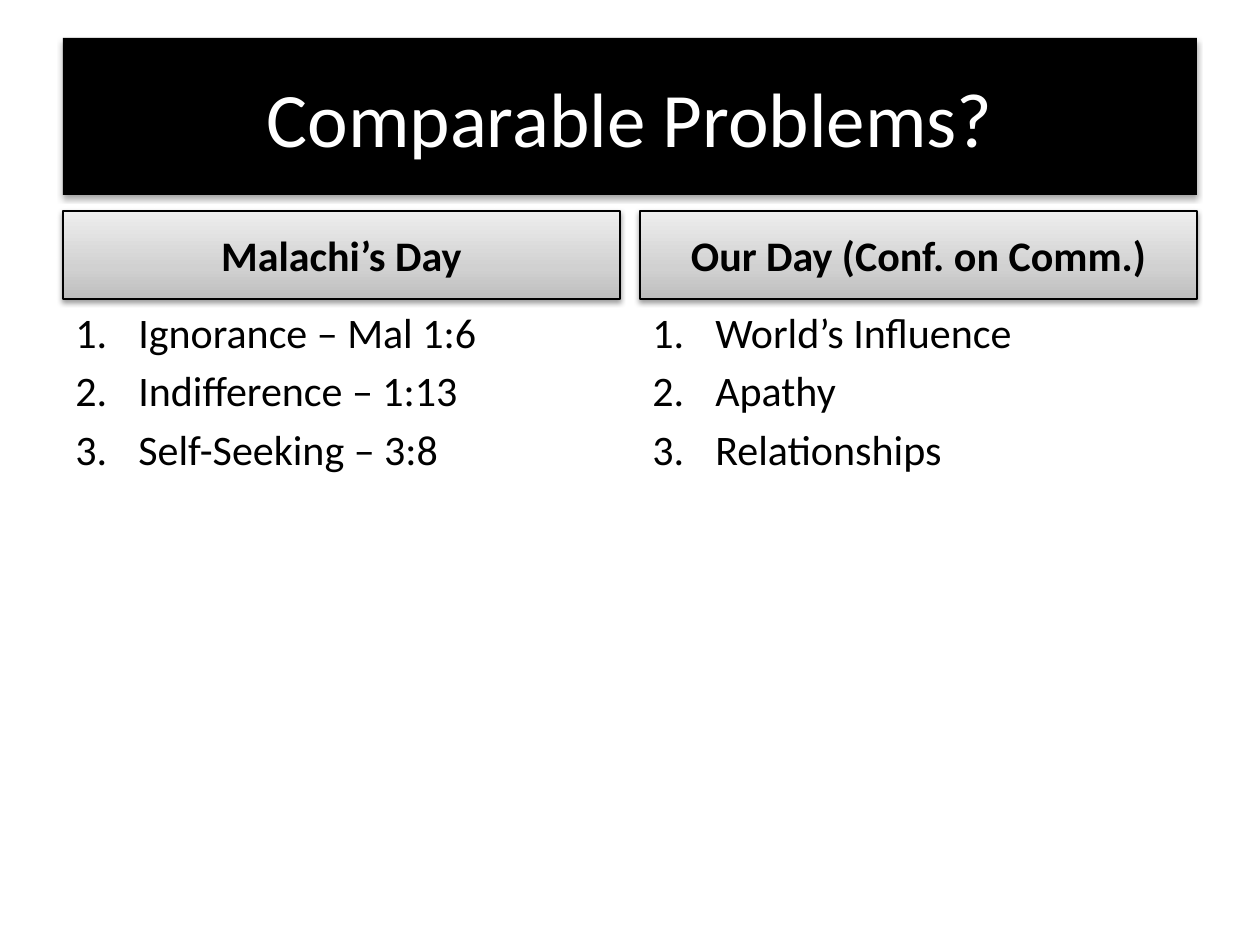
from dataclasses import dataclass

from lxml.etree import SubElement
from pptx import Presentation
from pptx.dml.color import RGBColor
from pptx.enum.shapes import MSO_SHAPE
from pptx.enum.text import MSO_ANCHOR, PP_ALIGN
from pptx.oxml import parse_xml
from pptx.oxml.ns import nsdecls, qn
from pptx.util import Inches, Pt

PX_PER_INCH = 126


@dataclass(frozen=True)
class Theme:
    font: str = "Calibri"
    dark: str = "000000"
    light: str = "FFFFFF"
    header_stops: tuple = ((0, "BDBDBD"), (35, "D1D1D1"), (100, "EEEEEE"))
    title_size: int = 44
    body_size: int = 24


THEME = Theme()
MARGIN, CONTENT_WIDTH = 63, 1134
COLUMN_WIDTH, COLUMN_GAP = 557, 20
COLUMNS = (
    ("Malachi’s Day",
     ("Ignorance – Mal 1:6", "Indifference – 1:13", "Self-Seeking – 3:8")),
    ("Our Day (Conf. on Comm.)",
     ("World’s Influence", "Apathy", "Relationships")),
)


def px(*lengths):
    return [Inches(length / PX_PER_INCH) for length in lengths]


def style_paragraph(para, text, size, color, bold=False):
    para.text = text
    para.font.name = THEME.font
    para.font.size = Pt(size)
    para.font.bold = bold
    para.font.color.rgb = RGBColor.from_string(color)


def add_space_before(para, percent):
    spacing = SubElement(para._p.get_or_add_pPr(), qn("a:spcBef"))
    SubElement(spacing, qn("a:spcPct"), val=str(percent * 1000))


def add_shadow(shape, opacity, distance):
    """Drop a soft black shadow straight down."""
    shape.shadow.inherit = False
    effects = shape._element.spPr.find(qn("a:effectLst"))
    shadow = SubElement(effects, qn("a:outerShdw"), blurRad=str(Pt(3.1)),
                        dist=str(Pt(distance)), dir="5400000", rotWithShape="0")
    color = SubElement(shadow, qn("a:srgbClr"), val=THEME.dark)
    SubElement(color, qn("a:alpha"), val=str(opacity * 1000))


def fill_gradient(shape, stops):
    """Run the gradient stops from the bottom edge to the top."""
    shape.fill.gradient()
    properties = shape._element.spPr
    marks = "".join(f'<a:gs pos="{position * 1000}"><a:srgbClr val="{color}"/></a:gs>'
                    for position, color in stops)
    gradient = parse_xml(f'<a:gradFill {nsdecls("a")}><a:gsLst>{marks}</a:gsLst>'
                         '<a:lin ang="16200000" scaled="0"/></a:gradFill>')
    properties.replace(properties.find(qn("a:gradFill")), gradient)


def add_banner(page, bounds, text, size, color, bold=False):
    box = page.shapes.add_shape(MSO_SHAPE.RECTANGLE, *px(*bounds))
    box.text_frame.word_wrap = True
    box.text_frame.vertical_anchor = MSO_ANCHOR.MIDDLE
    para = box.text_frame.paragraphs[0]
    para.alignment = PP_ALIGN.CENTER
    style_paragraph(para, text, size, color, bold)
    return box


def add_title(page, text):
    box = add_banner(page, (MARGIN, 38, CONTENT_WIDTH, 157), text,
                     THEME.title_size, THEME.light)
    box.fill.solid()
    box.fill.fore_color.rgb = RGBColor.from_string(THEME.dark)
    box.line.fill.background()
    add_shadow(box, opacity=35, distance=1.8)


def add_column_header(page, left, text):
    box = add_banner(page, (left, 211, COLUMN_WIDTH, 88), text,
                     THEME.body_size, THEME.dark, bold=True)
    add_space_before(box.text_frame.paragraphs[0], 20)
    fill_gradient(box, THEME.header_stops)
    box.line.color.rgb = RGBColor.from_string(THEME.dark)
    box.line.width = Pt(0.75)
    add_shadow(box, opacity=38, distance=1.6)


def add_numbered_list(page, left, items):
    box = page.shapes.add_textbox(*px(left, 300, COLUMN_WIDTH, 544))
    frame = box.text_frame
    frame.word_wrap = True
    for index, item in enumerate(items):
        para = frame.add_paragraph() if index else frame.paragraphs[0]
        style_paragraph(para, item, THEME.body_size, THEME.dark)
        add_space_before(para, 20)
        properties = para._p.get_or_add_pPr()
        properties.set("marL", str(Inches(0.5)))
        properties.set("indent", str(-Inches(0.5)))
        # Schema order: spacing, bullet, then default run properties
        bullet = SubElement(properties, qn("a:buAutoNum"), type="arabicPeriod")
        defaults = properties.find(qn("a:defRPr"))
        properties.remove(defaults)
        bullet.addnext(defaults)


def order_paragraph_defaults(page):
    """Keep default run properties last in each paragraph's properties."""
    for defaults in list(page.shapes._spTree.iter(qn("a:defRPr"))):
        defaults.getparent().append(defaults)


def main():
    deck = Presentation()
    deck.slide_width, deck.slide_height = Inches(10), Inches(7.5)
    page = deck.slides.add_slide(deck.slide_layouts[6])

    # Title band
    add_title(page, "Comparable Problems?")

    # Two columns, each a header over a numbered list
    for index, (header, items) in enumerate(COLUMNS):
        left = MARGIN + index * (COLUMN_WIDTH + COLUMN_GAP)
        add_column_header(page, left, header)
        add_numbered_list(page, left, items)

    order_paragraph_defaults(page)
    deck.save("out.pptx")


if __name__ == "__main__":
    main()
